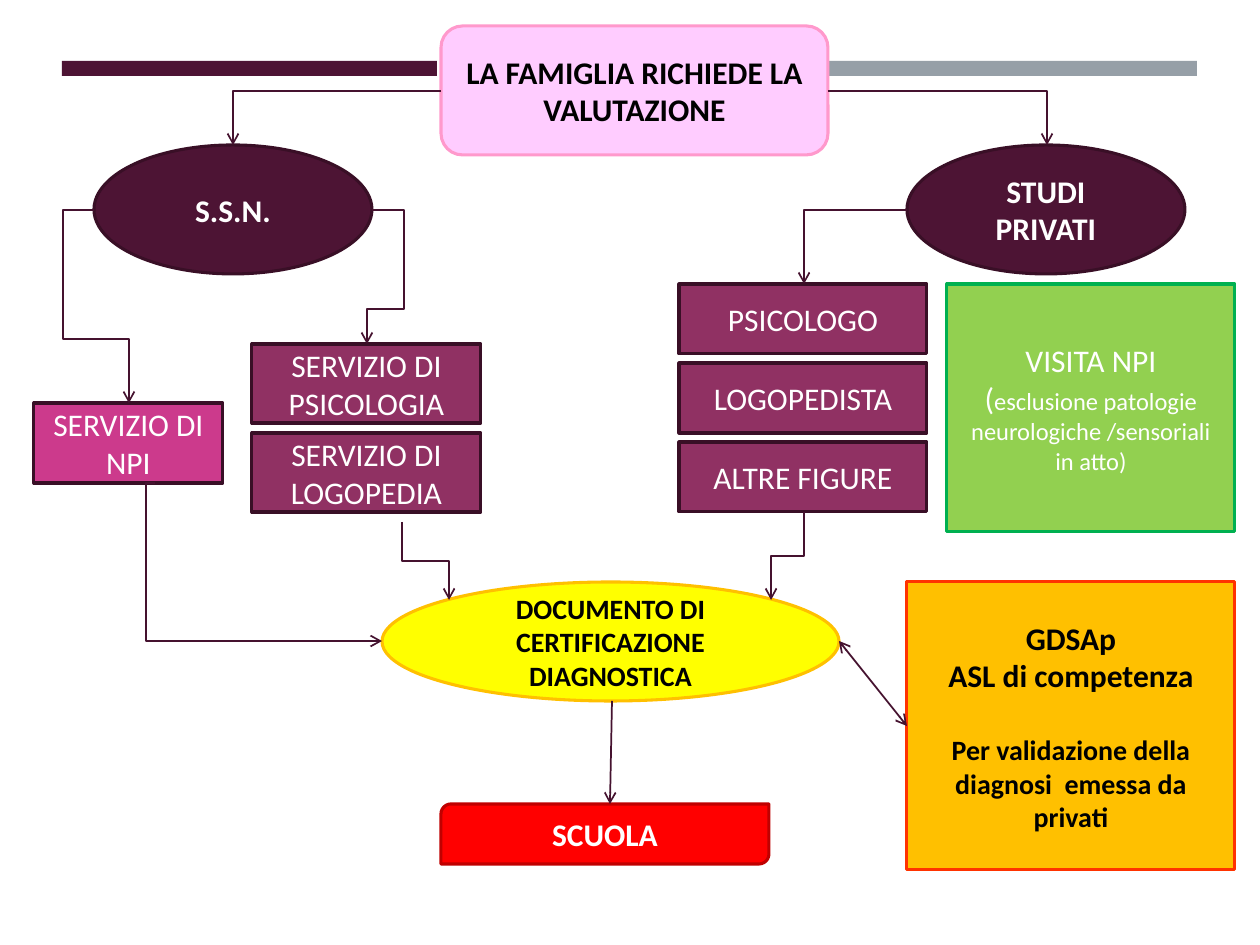
import pptx
import pptx.util
import pptx.dml.color
import pptx.enum.shapes
import pptx.enum.text
import pptx.oxml.ns
from dataclasses import dataclass
from lxml import etree

SCALE = 914400 / 126  # EMU per px
KIND = pptx.enum.shapes.MSO_SHAPE
LINK = pptx.enum.shapes.MSO_CONNECTOR


@dataclass(frozen=True)
class Theme:
    font: str = "Calibri"
    big: int = 18
    mid: int = 16
    small: int = 14
    edge: float = 1.75
    thin: float = 1
    white: str = "FFFFFF"
    black: str = "000000"
    plum: str = "4D1434"
    dark: str = "390F26"
    arrow: str = "45122F"
    grey: str = "969FA7"
    wine: str = "903163"
    rose: str = "CC3A8C"
    pale: str = "FFCCFF"
    pink: str = "FF99CC"
    yellow: str = "FFFF00"
    amber: str = "FFC000"
    lime: str = "92D050"
    green: str = "00B050"
    red: str = "FF0000"
    brick: str = "C00000"
    flame: str = "FF3300"


T = Theme()


def px(n):
    return pptx.util.Emu(round(n * SCALE))


def rgb(code):
    return pptx.dml.color.RGBColor.from_string(code)


def write(shape, paras, size=T.big, color=T.white, bold=False, gap=0):
    """Fill a shape with paragraphs of (text, size) runs; gap precedes the last."""
    frame = shape.text_frame
    frame.word_wrap = True
    frame.vertical_anchor = pptx.enum.text.MSO_ANCHOR.MIDDLE
    if isinstance(paras, str):
        paras = [[(paras, size)]]
    for i, runs in enumerate(paras):
        para = frame.add_paragraph() if i else frame.paragraphs[0]
        para.alignment = pptx.enum.text.PP_ALIGN.CENTER
        for words, points in runs:
            run = para.add_run()
            run.text = words
            run.font.name = T.font
            run.font.size = pptx.util.Pt(points)
            run.font.bold = bold
            run.font.color.rgb = rgb(color)
    if gap:
        para.space_before = pptx.util.Pt(gap)


def box(slide, kind, at, fill, edge=None):
    shape = slide.shapes.add_shape(kind, *map(px, at))
    shape.shadow.inherit = False
    shape.fill.solid()
    shape.fill.fore_color.rgb = rgb(fill)
    if edge:
        shape.line.color.rgb = rgb(edge)
        shape.line.width = pptx.util.Pt(T.edge)
    else:
        shape.line.fill.background()
    return shape


def node(slide, kind, at, fill, edge, paras, **style):
    shape = box(slide, kind, at, fill, edge)
    write(shape, paras, **style)
    return shape


def ink(link, both=False):
    """Colour a connector and give it open arrowheads."""
    link.line.color.rgb = rgb(T.arrow)
    link.line.width = pptx.util.Pt(T.thin)
    line = link.line._get_or_add_ln()
    for end in ("headEnd", "tailEnd") if both else ("tailEnd",):
        etree.SubElement(line, pptx.oxml.ns.qn("a:" + end), type="arrow")
    etree.SubElement(link._element.spPr, pptx.oxml.ns.qn("a:effectLst"))


def straight(slide, start, end, both=False):
    link = slide.shapes.add_connector(LINK.STRAIGHT, *map(px, start + end))
    ink(link, both)
    return link


def elbow(slide, start, end, bends, turn=0, flip="", adj=()):
    """Bent arrow; a quarter turn swaps the sides of its frame."""
    (x1, y1), (x2, y2) = start, end
    wide, high = abs(x2 - x1), abs(y2 - y1)
    if turn % 180:
        wide, high = high, wide
    left, top = (x1 + x2 - wide) / 2, (y1 + y2 - high) / 2
    link = slide.shapes.add_connector(
        LINK.ELBOW, *map(px, (left, top, left + wide, top + high)))
    frame = link._element.spPr.find(pptx.oxml.ns.qn("a:xfrm"))
    frame.set("rot", str(turn * 60000))
    for axis in flip:
        frame.set("flip" + axis, "1")
    shape = link._element.spPr.find(pptx.oxml.ns.qn("a:prstGeom"))
    shape.set("prst", f"bentConnector{bends}")
    guides = shape.find(pptx.oxml.ns.qn("a:avLst"))
    if guides is None:
        guides = etree.SubElement(shape, pptx.oxml.ns.qn("a:avLst"))
    for i, part in enumerate(adj, 1):
        etree.SubElement(guides, pptx.oxml.ns.qn("a:gd"), name=f"adj{i}",
                         fmla=f"val {round(part * 100000)}")
    ink(link)


def stack(slide, names, left, top, wide, high, step):
    """Column of equal service boxes."""
    for i, name in enumerate(names):
        node(slide, KIND.RECTANGLE, (left, top + i * step, wide, high),
             T.wine, T.dark, name)


def main():
    deck = pptx.Presentation()
    deck.slide_width, deck.slide_height = px(1260), px(945)
    slide = deck.slides.add_slide(deck.slide_layouts[6])

    # Bars behind the heading
    box(slide, KIND.RECTANGLE, (62, 61, 375, 15), T.plum)
    box(slide, KIND.RECTANGLE, (823, 61, 374, 15), T.grey)

    # Request and the two routes
    node(slide, KIND.ROUNDED_RECTANGLE, (441, 26, 387, 129), T.pale, T.pink,
         "LA FAMIGLIA RICHIEDE LA VALUTAZIONE", color=T.black, bold=True)
    for left, name in ((94, "S.S.N."), (907, "STUDI PRIVATI")):
        node(slide, KIND.OVAL, (left, 145, 278, 129), T.plum, T.dark,
             name, bold=True)

    # Services and professionals
    node(slide, KIND.RECTANGLE, (34, 403, 189, 80), T.rose, T.dark,
         "SERVIZIO DI NPI")
    stack(slide, ("SERVIZIO DI PSICOLOGIA", "SERVIZIO DI LOGOPEDIA"),
          252, 344, 229, 79, 89)
    stack(slide, ("PSICOLOGO", "LOGOPEDISTA", "ALTRE FIGURE"),
          679, 284, 248, 70, 79)
    node(slide, KIND.RECTANGLE, (947, 284, 288, 248), T.lime, T.green,
         [[("VISITA NPI", T.big)],
          [("(", T.big),
           ("esclusione patologie neurologiche /sensoriali in atto)", T.small)]])

    # Certificate, validation and school
    node(slide, KIND.OVAL, (382, 582, 457, 119), T.yellow, T.amber,
         "DOCUMENTO DI CERTIFICAZIONE DIAGNOSTICA",
         size=T.mid, color=T.black, bold=True)
    check = node(
        slide, KIND.RECTANGLE, (907, 582, 328, 288), T.amber, T.flame,
        [[("GDSAp", T.big)], [("ASL di competenza", T.big)],
         [("Per validazione della diagnosi  emessa da privati", T.mid)]],
        color=T.black, bold=True, gap=22)
    node(slide, KIND.ROUND_2_DIAG_RECTANGLE, (441, 804, 328, 60),
         T.red, T.brick, "SCUOLA", bold=True)

    # Arrows from the request to the routes
    elbow(slide, (828, 91), (1047, 145), 2)
    elbow(slide, (441, 91), (233, 145), 2, turn=180, flip="V")

    # Arrows from the routes to the services
    elbow(slide, (94, 210), (129, 403), 4, turn=180, flip="HV",
          adj=(-0.89, 0.67))
    elbow(slide, (372, 210), (367, 344), 4, flip="H", adj=(-6.4, 0.74))
    elbow(slide, (907, 210), (804, 284), 2, turn=180, flip="V")

    # Arrows into and out of the certificate
    elbow(slide, (155, 483), (382, 641), 3, adj=(-0.04,))
    elbow(slide, (402, 522), (449, 600), 3, turn=270, flip="H", adj=(0.5,))
    elbow(slide, (804, 512), (771, 600), 3, turn=90, adj=(0.5,))
    straight(slide, (612, 701), (610, 804))
    straight(slide, (839, 641), (907, 726), both=True).end_connect(check, 1)

    deck.save("out.pptx")


if __name__ == "__main__":
    main()
